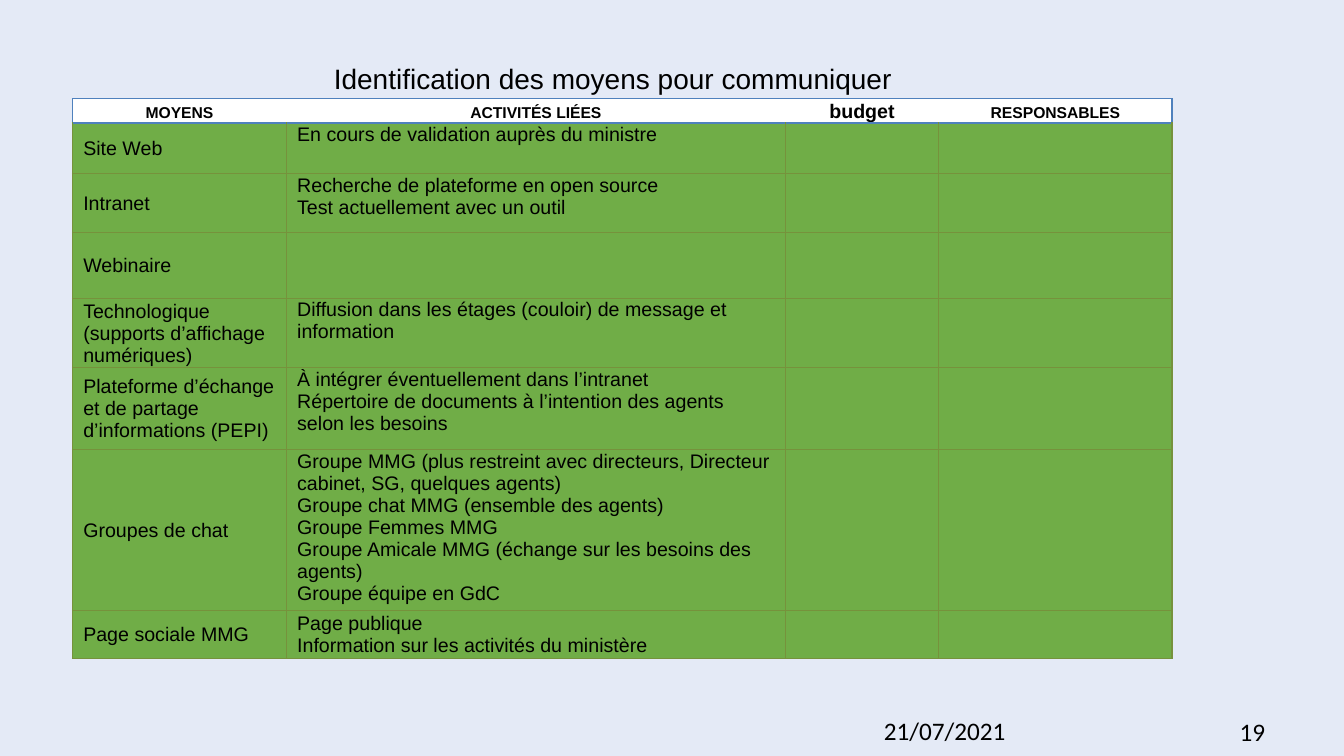
from dataclasses import dataclass

from lxml import etree
from pptx import Presentation
from pptx.dml.color import RGBColor
from pptx.enum.text import MSO_ANCHOR, PP_ALIGN
from pptx.oxml.ns import qn
from pptx.util import Pt

MIDDLE, TOP = MSO_ANCHOR.MIDDLE, MSO_ANCHOR.TOP
CENTER, LEFT = PP_ALIGN.CENTER, PP_ALIGN.LEFT


@dataclass(frozen=True)
class Theme:
    background: str = "E4EAF6"
    text: str = "000000"
    header_fill: str = "FFFFFF"
    header_line: str = "4F81BD"
    body_fill: str = "70AD47"
    body_line: str = "76923C"
    body_font: str = "Arial"
    footer_font: str = "Calibri"
    title_size: int = 20
    footer_size: int = 18
    table_size: int = 14


@dataclass(frozen=True)
class Box:
    left: float
    top: float
    width: float
    height: float

    def lengths(self) -> tuple:
        return Pt(self.left), Pt(self.top), Pt(self.width), Pt(self.height)


@dataclass(frozen=True)
class Heading:
    text: str
    small_caps: bool = True


@dataclass(frozen=True)
class Medium:
    name: str
    height: float
    activities: tuple = ()
    anchor: MSO_ANCHOR = TOP


@dataclass(frozen=True)
class FooterItem:
    text: str
    box: Box


THEME = Theme()
TITLE = "Identification des moyens pour communiquer"
TITLE_BOX = Box(113.8, 23, 648, 69)
TABLE_BOX = Box(51.8, 70.5, 785, 400)
COLUMN_WIDTHS = (152.8, 356.4, 109.6, 166.6)
HEADER_HEIGHT = 17.4

HEADINGS = (
    Heading("moyens"),
    Heading("activités liées"),
    Heading("budget", small_caps=False),
    Heading("responsables"),
)
MEDIA = (
    Medium("Site Web", 36, ("En cours de validation auprès du ministre",)),
    Medium("Intranet", 42.3, ("Recherche de plateforme en open source",
                              "Test actuellement avec un outil")),
    Medium("Webinaire", 46.8),
    Medium("Technologique (supports d’affichage numériques)", 49.8,
           ("Diffusion dans les étages (couloir) de message et information",)),
    Medium("Plateforme d’échange et de partage d’informations (PEPI)", 58.4,
           ("À intégrer éventuellement dans l’intranet",
            "Répertoire de documents à l’intention des agents selon les besoins")),
    Medium("Groupes de chat", 115.2,
           ("Groupe MMG (plus restreint avec directeurs, Directeur cabinet, SG, quelques agents)",
            "Groupe chat MMG (ensemble des agents)",
            "Groupe Femmes MMG",
            "Groupe Amicale MMG (échange sur les besoins des agents)",
            "Groupe équipe en GdC")),
    Medium("Page sociale MMG", 34, ("Page publique",
                                    "Information sur les activités du ministère"), MIDDLE),
)
FOOTER = (
    FooterItem("21/07/2021", Box(624.3, 507.6, 216, 29)),
    FooterItem("19", Box(878.4, 508.3, 79, 29)),
)


def add_run(paragraph, text: str, font_name: str, size: int, bold: bool = False):
    run = paragraph.add_run()
    run.text = text
    run.font.name = font_name
    run.font.size = Pt(size)
    run.font.bold = bold
    run.font.color.rgb = RGBColor.from_string(THEME.text)
    return run


def add_title(slide) -> None:
    title = slide.shapes.title
    title.left, title.top, title.width, title.height = TITLE_BOX.lengths()
    title.text_frame.vertical_anchor = MIDDLE
    title.text_frame.word_wrap = True
    paragraph = title.text_frame.paragraphs[0]
    paragraph.alignment = CENTER
    paragraph.line_spacing = 0.9
    add_run(paragraph, TITLE, THEME.body_font, THEME.title_size)


def set_borders(cell, colors: dict) -> None:
    """Draw each side in its colour; a side set to None has no line."""
    properties = cell._tc.get_or_add_tcPr()
    for side in "LRTB":
        line = etree.SubElement(properties, qn(f"a:ln{side}"), w=str(Pt(1)))
        if colors[side] is None:
            etree.SubElement(line, qn("a:noFill"))
        else:
            fill = etree.SubElement(line, qn("a:solidFill"))
            etree.SubElement(fill, qn("a:srgbClr"), val=colors[side])


def format_cell(cell, fill: str, borders: dict, anchor: MSO_ANCHOR) -> None:
    set_borders(cell, borders)
    cell.fill.solid()
    cell.fill.fore_color.rgb = RGBColor.from_string(fill)
    cell.vertical_anchor = anchor
    cell.margin_left = cell.margin_right = Pt(7.7)
    cell.margin_top, cell.margin_bottom = Pt(0.6), Pt(0)


def write_lines(cell, lines: tuple) -> None:
    for index, text in enumerate(lines):
        frame = cell.text_frame
        paragraph = frame.add_paragraph() if index else frame.paragraphs[0]
        paragraph.alignment = LEFT
        add_run(paragraph, text, THEME.body_font, THEME.table_size)


def fill_header(table) -> None:
    last = len(HEADINGS) - 1
    for column, heading in enumerate(HEADINGS):
        cell = table.cell(0, column)
        line = THEME.header_line
        borders = {"L": None if column else line, "R": line if column == last else None,
                   "T": line, "B": line}
        format_cell(cell, THEME.header_fill, borders, MIDDLE)
        paragraph = cell.text_frame.paragraphs[0]
        paragraph.alignment = CENTER
        run = add_run(paragraph, heading.text, THEME.body_font, THEME.table_size, bold=True)
        if heading.small_caps:
            run._r.get_or_add_rPr().set("cap", "small")


def fill_row(table, row: int, medium: Medium) -> None:
    borders = dict.fromkeys("LRTB", THEME.body_line)
    if row == 1:
        borders["T"] = THEME.header_line
    contents = ((medium.name,), medium.activities, (), ())
    anchors = (MIDDLE, medium.anchor, TOP, TOP)
    for column, (lines, anchor) in enumerate(zip(contents, anchors)):
        cell = table.cell(row, column)
        format_cell(cell, THEME.body_fill, borders, anchor)
        write_lines(cell, lines)


def add_media_table(slide) -> None:
    table = slide.shapes.add_table(len(MEDIA) + 1, len(HEADINGS), *TABLE_BOX.lengths()).table
    table.first_row = table.horz_banding = False
    for column, width in zip(table.columns, COLUMN_WIDTHS):
        column.width = Pt(width)
    table.rows[0].height = Pt(HEADER_HEIGHT)
    fill_header(table)
    for row, medium in enumerate(MEDIA, start=1):
        table.rows[row].height = Pt(medium.height)
        fill_row(table, row, medium)


def add_footer_item(slide, item: FooterItem) -> None:
    frame = slide.shapes.add_textbox(*item.box.lengths()).text_frame
    frame.word_wrap = True
    add_run(frame.paragraphs[0], item.text, THEME.footer_font, THEME.footer_size)


def main() -> None:
    presentation = Presentation()
    presentation.slide_width, presentation.slide_height = Pt(960), Pt(540)
    slide = presentation.slides.add_slide(presentation.slide_layouts.get_by_name("Title Only"))

    # Background
    slide.background.fill.solid()
    slide.background.fill.fore_color.rgb = RGBColor.from_string(THEME.background)

    # Title, table, then date and page number
    add_title(slide)
    add_media_table(slide)
    for item in FOOTER:
        add_footer_item(slide, item)

    presentation.save("out.pptx")


if __name__ == "__main__":
    main()
